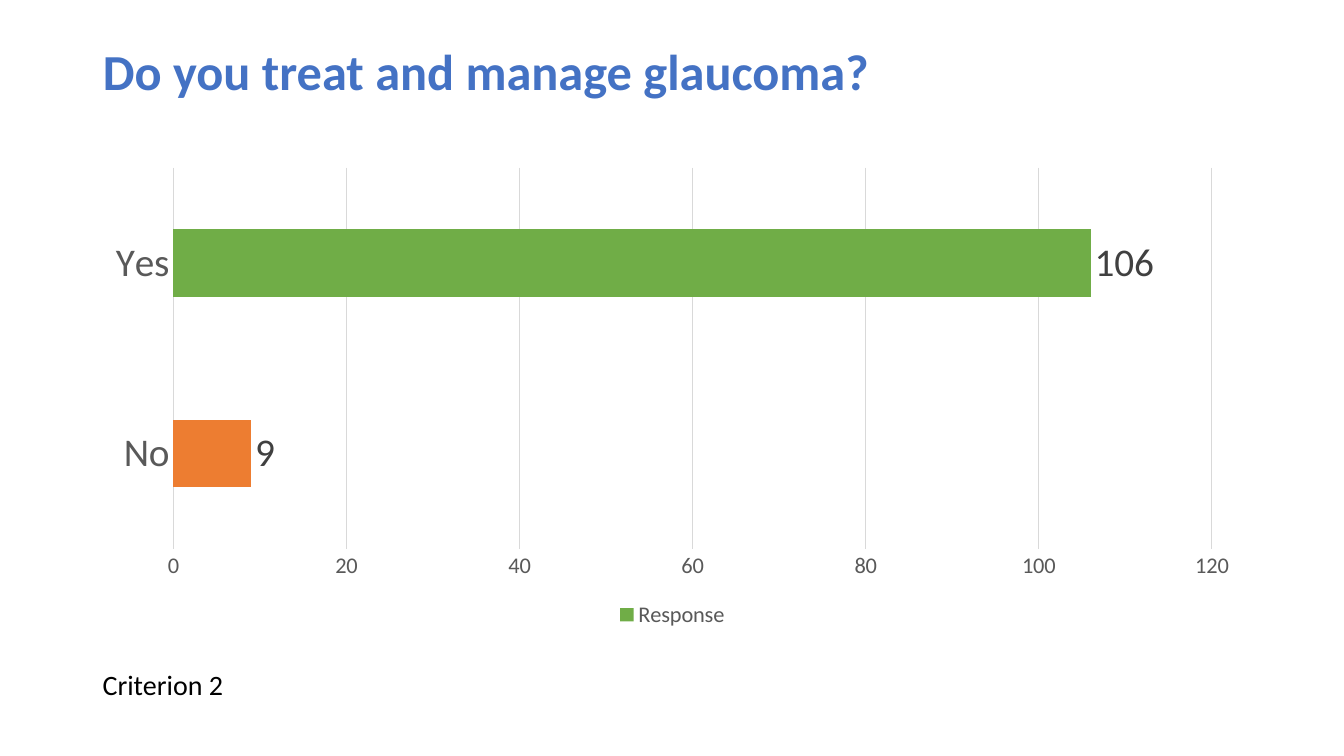
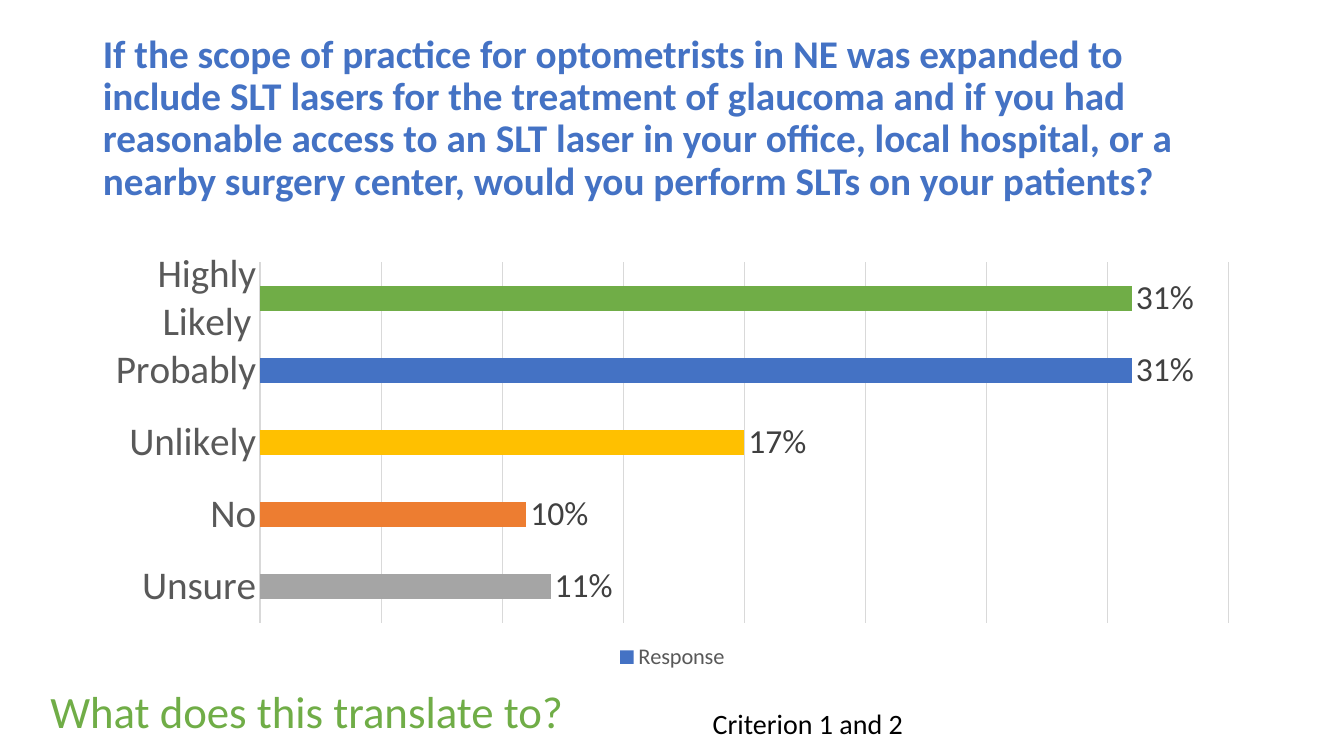
"""Build two survey slides, each with a question, a bar chart and criterion notes."""
import dataclasses
import typing

import pptx
import pptx.chart.data
import pptx.dml.color
import pptx.enum.chart
import pptx.enum.text
import pptx.util

Anchor = pptx.enum.text.MSO_ANCHOR


@dataclasses.dataclass(frozen=True)
class Theme:
    """Colours, type sizes and line width shared by the slides."""
    font: str = "Calibri"
    blue: str = "4472C4"
    green: str = "70AD47"
    orange: str = "ED7D31"
    gold: str = "FFC000"
    silver: str = "A5A5A5"
    black: str = "000000"
    axis_text: str = "595959"
    label_text: str = "404040"
    grid: str = "D9D9D9"
    heading: int = 36
    prompt: int = 32
    category: int = 28
    note: int = 20
    scale: int = 16
    base: int = 10
    hairline: float = 0.75
    gap: int = 182


class Box(typing.NamedTuple):
    """Left, top, width and height in percent of the slide's size."""
    left: float
    top: float
    width: float
    height: float


class Answer(typing.NamedTuple):
    """One bar: its category, value, colour and optional label wording."""
    category: str
    count: int
    color: str
    label: typing.Optional[str] = None


class Note(typing.NamedTuple):
    """A line of text below the chart."""
    text: str
    box: Box
    style: dict[str, typing.Any]


@dataclasses.dataclass(frozen=True)
class Survey:
    """One question with its answers and the layout of its slide."""
    question: str
    question_size: int
    question_height: float
    chart_top: float
    chart_height: float
    answers: list[Answer]
    series_color: str
    label_size: int
    axis_max: int
    axis_step: int
    axis_visible: bool
    notes: list[Note]


THEME = Theme()
WIDTH, HEIGHT = pptx.util.Inches(13.33), pptx.util.Inches(7.5)
MARGIN, TITLE_TOP, CONTENT_WIDTH = 6.9, 5.33, 86.25
CRITERION = {"size": THEME.note, "color": THEME.black}

SURVEYS = [
    Survey(
        "Do you treat and manage glaucoma?", THEME.heading, 8.93, 20.93, 62.8,
        [Answer("No", 9, THEME.orange), Answer("Yes", 106, THEME.green)],
        THEME.green, 28, 120, 20, True,
        [Note("Criterion 2", Box(MARGIN, 87.6, 26.48, 5.87), CRITERION)],
    ),
    Survey(
        "If the scope of practice for optometrists in NE was expanded to include SLT lasers "
        "for the treatment of glaucoma and if you had reasonable access to an SLT laser in "
        "your office, local hospital, or a nearby surgery center, would you perform SLTs on "
        "your patients?", 28, 20.8, 32.13, 57.2,
        [
            Answer("Unsure", 12, THEME.silver, "11%"),
            Answer("No", 11, THEME.orange, "10%"),
            Answer("Unlikely", 20, THEME.gold, "17%"),
            Answer("Probably", 36, THEME.blue, "31%"),
            Answer("Highly Likely", 36, THEME.green, "31%"),
        ],
        THEME.blue, 24, 40, 5, False,
        [
            Note("What does this translate to?", Box(3, 89.2, 49.29, 10.53),
                 {"size": THEME.prompt, "color": THEME.green,
                  "anchor": Anchor.MIDDLE, "line_spacing": 0.9}),
            Note("Criterion 1 and 2", Box(52.29, 92.8, 19.28, 5.87), CRITERION),
        ],
    ),
]


def rgb(color: str) -> pptx.dml.color.RGBColor:
    """Turn a hex string into a colour."""
    return pptx.dml.color.RGBColor.from_string(color)


def place(box: Box) -> tuple[int, int, int, int]:
    """Turn shares of the slide into lengths."""
    return (int(WIDTH * box.left / 100), int(HEIGHT * box.top / 100),
            int(WIDTH * box.width / 100), int(HEIGHT * box.height / 100))


def style_font(font: typing.Any, size: float, color: str, bold: bool = False) -> None:
    """Set the face, size, colour and weight of a font."""
    font.name, font.size, font.bold = THEME.font, pptx.util.Pt(size), bold
    font.color.rgb = rgb(color)


def write_text(frame: typing.Any, text: str, *, size: float, color: str, bold: bool = False,
               anchor: typing.Any = Anchor.TOP, line_spacing: float = 1.0) -> None:
    """Fill a text frame with one left-aligned, formatted paragraph."""
    frame.word_wrap = True
    frame.auto_size = pptx.enum.text.MSO_AUTO_SIZE.NONE
    frame.vertical_anchor = anchor
    paragraph = frame.paragraphs[0]
    paragraph.alignment = pptx.enum.text.PP_ALIGN.LEFT
    paragraph.line_spacing = line_spacing
    run = paragraph.add_run()
    run.text = text
    style_font(run.font, size, color, bold)


def style_line(line: typing.Any) -> None:
    """Draw a thin grey chart line."""
    line.color.rgb = rgb(THEME.grid)
    line.width = pptx.util.Pt(THEME.hairline)


def style_axes(chart: typing.Any, survey: Survey) -> None:
    """Format the category axis, the value axis and its gridlines."""
    categories, values = chart.category_axis, chart.value_axis
    for axis, size in ((categories, THEME.category), (values, THEME.scale)):
        axis.major_tick_mark = axis.minor_tick_mark = pptx.enum.chart.XL_TICK_MARK.NONE
        style_font(axis.tick_labels.font, size, THEME.axis_text)
    style_line(categories.format.line)
    values.format.line.fill.background()
    values.has_major_gridlines = True
    style_line(values.major_gridlines.format.line)
    values.minimum_scale, values.maximum_scale = 0, survey.axis_max
    values.major_unit = survey.axis_step
    values.visible = survey.axis_visible


def style_bars(plot: typing.Any, survey: Survey) -> None:
    """Colour the bars and label their ends."""
    outside = pptx.enum.chart.XL_LABEL_POSITION.OUTSIDE_END
    plot.gap_width, plot.vary_by_categories = THEME.gap, False
    series = plot.series[0]
    series.invert_if_negative = False
    series.format.fill.solid()
    series.format.fill.fore_color.rgb = rgb(survey.series_color)
    labels = series.data_labels
    labels.show_value, labels.position = True, outside
    style_font(labels.font, survey.label_size, THEME.label_text)
    for index, answer in enumerate(survey.answers):
        point = series.points[index]
        if answer.color != survey.series_color:
            point.format.fill.solid()
            point.format.fill.fore_color.rgb = rgb(answer.color)
        if answer.label:
            run = point.data_label.text_frame.paragraphs[0].add_run()
            run.text = answer.label
            style_font(run.font, survey.label_size, THEME.label_text)
            point.data_label.position = outside


def add_answers(slide: typing.Any, survey: Survey) -> None:
    """Add the bar chart of the answers."""
    data = pptx.chart.data.CategoryChartData()
    data.categories = [answer.category for answer in survey.answers]
    data.add_series("Response", [answer.count for answer in survey.answers])
    box = Box(MARGIN, survey.chart_top, CONTENT_WIDTH, survey.chart_height)
    chart = slide.shapes.add_chart(
        pptx.enum.chart.XL_CHART_TYPE.BAR_CLUSTERED, *place(box), data).chart
    style_font(chart.font, THEME.base, THEME.black)
    chart.has_title = False
    chart.has_legend = True
    chart.legend.position = pptx.enum.chart.XL_LEGEND_POSITION.BOTTOM
    chart.legend.include_in_layout = False
    style_font(chart.legend.font, THEME.scale, THEME.axis_text)
    style_axes(chart, survey)
    style_bars(chart.plots[0], survey)


def add_survey(deck: typing.Any, survey: Survey) -> None:
    """Add one survey slide."""
    slide = deck.slides.add_slide(deck.slide_layouts.get_by_name("Title Only"))
    question = slide.shapes.title
    question.left, question.top, question.width, question.height = place(
        Box(MARGIN, TITLE_TOP, CONTENT_WIDTH, survey.question_height))
    write_text(question.text_frame, survey.question, size=survey.question_size,
               color=THEME.blue, bold=True, anchor=Anchor.MIDDLE, line_spacing=0.9)
    add_answers(slide, survey)
    for note in survey.notes:
        box = slide.shapes.add_textbox(*place(note.box))
        write_text(box.text_frame, note.text, **note.style)


def main() -> None:
    """Build and save the presentation."""
    deck = pptx.Presentation()
    deck.slide_width, deck.slide_height = WIDTH, HEIGHT
    for survey in SURVEYS:
        add_survey(deck, survey)
    deck.save("out.pptx")


if __name__ == "__main__":
    main()
